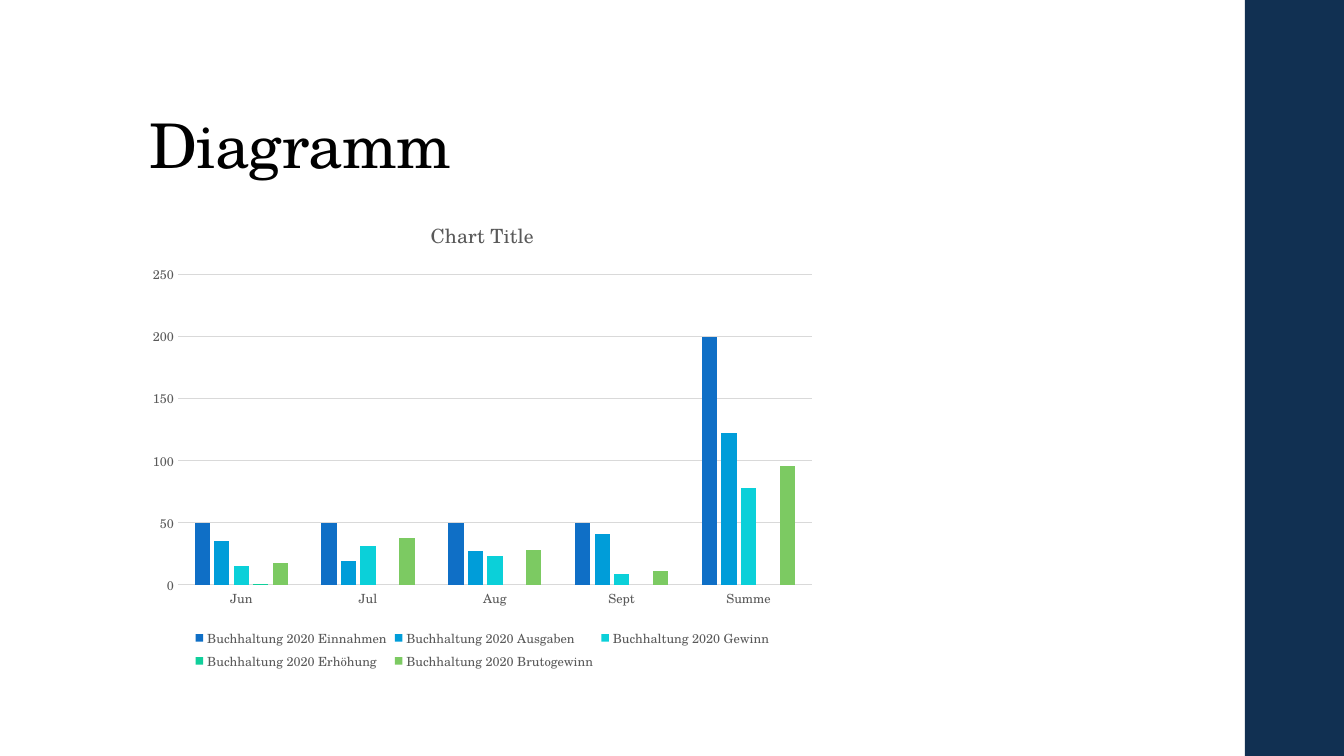
from pptx import Presentation
from pptx.chart.data import CategoryChartData
from pptx.dml.color import RGBColor
from pptx.enum.chart import XL_CHART_TYPE, XL_LEGEND_POSITION, XL_TICK_MARK
from pptx.enum.shapes import MSO_SHAPE
from pptx.enum.text import MSO_ANCHOR
from pptx.util import Pt

COLUMNS = XL_CHART_TYPE.COLUMN_CLUSTERED
BOTTOM = XL_LEGEND_POSITION.BOTTOM
NO_TICK = XL_TICK_MARK.NONE
RECT = MSO_SHAPE.RECTANGLE
LOW = MSO_ANCHOR.BOTTOM

FACE = "TeX Gyre Schola"
WIDE, HIGH = 960, 540
LEFT = 99.4
COLORS = {"band": "113052", "title": "000000", "label": "595959", "grid": "D9D9D9"}
MONTHS = ["Jun", "Jul", "Aug", "Sept", "Summe"]
SERIES = [
    ("Einnahmen", "0F6FC6", [50, 50, 50, 50, 200]),
    ("Ausgaben", "009DD9", [35, 19, 27, 41, 122]),
    ("Gewinn", "0BD0D9", [15, 31, 23, 9, 78]),
    ("Erhöhung", "10CF9B", [1, None, None, None, None]),
    ("Brutogewinn", "7CCA62", [18, 38, 28, 11, 96]),
]


def rgb(code):
    return RGBColor.from_string(code)


def style(font, size, color):
    font.name = FACE
    font.size = Pt(size)
    font.bold = False
    font.color.rgb = rgb(color)


def rule(line):
    """Give a chart line the thin grid look."""
    line.color.rgb = rgb(COLORS["grid"])
    line.width = Pt(0.75)


def add_band(slide, box):
    band = slide.shapes.add_shape(RECT, *map(Pt, box))
    band.shadow.inherit = False
    band.fill.solid()
    band.fill.fore_color.rgb = rgb(COLORS["band"])
    band.line.fill.background()


def add_title(slide, box, text):
    frame = slide.shapes.add_textbox(*map(Pt, box)).text_frame
    frame.word_wrap = True
    frame.vertical_anchor = LOW
    para = frame.paragraphs[0]
    para.line_spacing = 0.9
    run = para.add_run()
    run.text = text
    style(run.font, 44, COLORS["title"])
    run.font._element.set("spc", "-50")


def add_chart(slide, box):
    data = CategoryChartData()
    data.categories = MONTHS
    for name, _, vals in SERIES:
        data.add_series(f"Buchhaltung 2020 {name}", vals)
    chart = slide.shapes.add_chart(COLUMNS, *map(Pt, box), data).chart
    style(chart.font, 10, COLORS["title"])

    chart.has_title = True
    run = chart.chart_title.text_frame.paragraphs[0].add_run()
    run.text = "Chart Title"
    style(run.font, 14, COLORS["label"])
    chart.chart_title.include_in_layout = False

    chart.has_legend = True
    chart.legend.position = BOTTOM
    chart.legend.include_in_layout = False
    style(chart.legend.font, 9, COLORS["label"])

    months, values = chart.category_axis, chart.value_axis
    for axis in (months, values):
        axis.major_tick_mark = axis.minor_tick_mark = NO_TICK
        style(axis.tick_labels.font, 9, COLORS["label"])
    rule(months.format.line)
    values.format.line.fill.background()
    values.has_major_gridlines = True
    rule(values.major_gridlines.format.line)

    plot = chart.plots[0]
    plot.vary_by_categories = False
    plot.gap_width = 219
    plot.overlap = -27
    for bars, (_, color, _) in zip(plot.series, SERIES):
        bars.invert_if_negative = False
        bars.format.fill.solid()
        bars.format.fill.fore_color.rgb = rgb(color)


def main():
    deck = Presentation()
    deck.slide_width, deck.slide_height = Pt(WIDE), Pt(HIGH)
    slide = deck.slides.add_slide(deck.slide_layouts[6])
    add_band(slide, (889.2, 0, 72, HIGH))
    add_title(slide, (LEFT, 28.8, 763.2, 104.4), "Diagramm")
    add_chart(slide, (LEFT, 142.6, 490.3, 339.1))
    deck.save("out.pptx")


if __name__ == "__main__":
    main()
